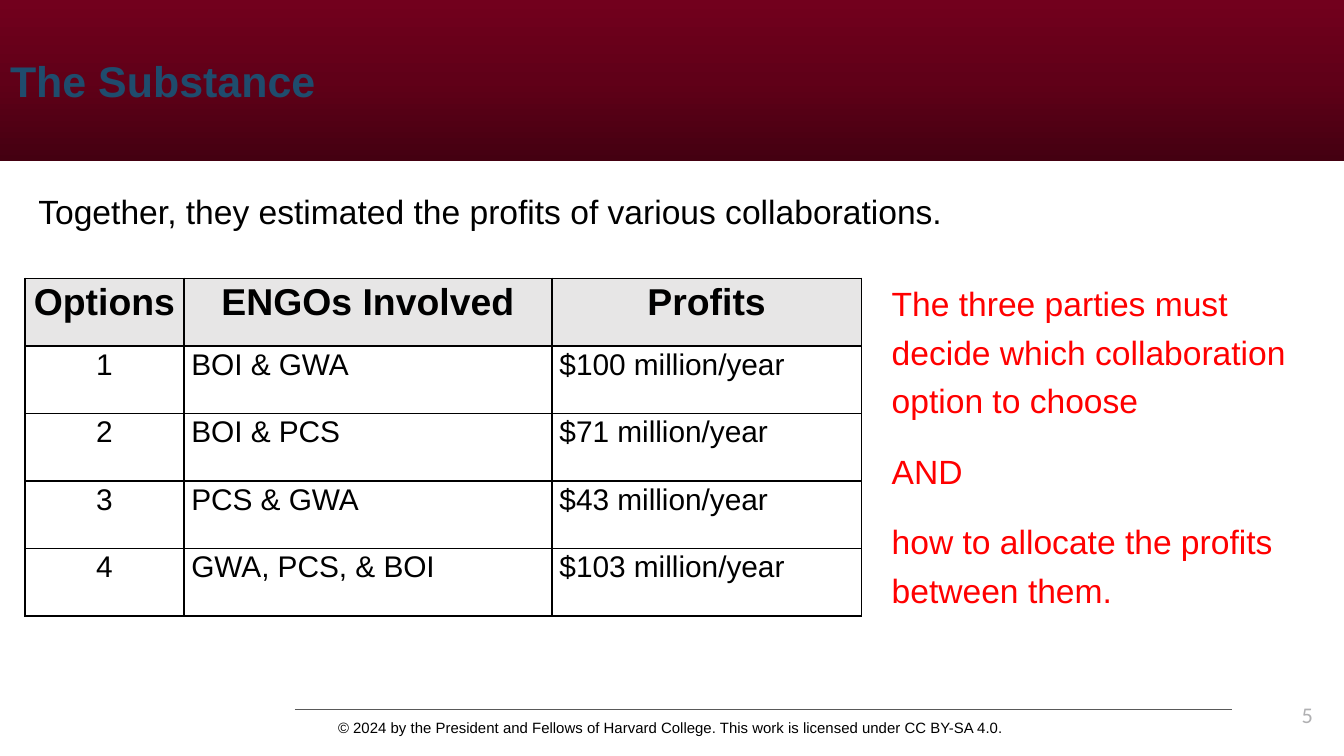
import copy
from dataclasses import dataclass

import pptx
import pptx.dml.color
import pptx.enum.shapes
import pptx.enum.text
import pptx.oxml
import pptx.oxml.ns
import pptx.util

Pt = pptx.util.Pt
RGB = pptx.dml.color.RGBColor.from_string
Align = pptx.enum.text.PP_ALIGN
Anchor = pptx.enum.text.MSO_ANCHOR


@dataclass(frozen=True)
class Theme:
    font: str = "Arial"
    number_font: str = "Calibri"
    black: str = "000000"
    title: str = "1F4C6D"
    accent: str = "FF0000"
    rule: str = "595959"
    number: str = "B0B0B2"
    header_fill: str = "E7E6E6"
    banner: tuple = ((0, "440011"), (0.5, "600018"), (1, "72001D"))
    title_size: float = 23
    header_size: float = 20
    body_size: float = 18
    cell_size: float = 16
    number_size: float = 12
    footer_size: float = 8


theme = Theme()


def style(para, size, color, bold=False, align=Align.LEFT, name=theme.font):
    para.alignment = align
    para.font.name = name
    para.font.size = Pt(size)
    para.font.bold = bold
    para.font.color.rgb = RGB(color)


def add_text(page, frame, insets, lines, size, color, **look):
    """Add a wrapping text box; insets are (horizontal, vertical)."""
    box = page.shapes.add_textbox(*map(Pt, frame))
    text = box.text_frame
    text.word_wrap = True
    text.margin_left = text.margin_right = Pt(insets[0])
    text.margin_top = text.margin_bottom = Pt(insets[1])
    text.text = "\n".join(lines)
    for para in text.paragraphs:
        style(para, size, color, **look)
    return text


deck = pptx.Presentation()
deck.slide_width, deck.slide_height = Pt(720), Pt(405)
page = deck.slides.add_slide(deck.slide_layouts[6])

# Footer
rule = page.shapes.add_connector(
    pptx.enum.shapes.MSO_CONNECTOR.STRAIGHT, Pt(158), Pt(380), Pt(660), Pt(380))
rule.line.color.rgb = RGB(theme.rule)
rule.line.width = Pt(0.75)
rule._element.spPr.append(pptx.oxml.parse_xml(
    f'<a:effectLst {pptx.oxml.ns.nsdecls("a")}/>'))
add_text(page, (174, 381.6, 486, 17), (7.2, 3.6),
         ["© 2024 by the President and Fellows of Harvard College. "
          "This work is licensed under CC BY-SA 4.0."],
         theme.footer_size, theme.black)

# Title banner
banner = page.shapes.add_shape(
    pptx.enum.shapes.MSO_SHAPE.RECTANGLE, 0, 0, deck.slide_width, Pt(86.4))
banner.shadow.inherit = False
banner.line.fill.background()
banner.fill.gradient()
banner.fill.gradient_angle = 90
stop_list = banner._element.spPr.find(".//" + pptx.oxml.ns.qn("a:gsLst"))
stop_list.append(copy.deepcopy(stop_list[-1]))
for stop, (position, color) in zip(banner.fill.gradient_stops, theme.banner):
    stop.position = position
    stop.color.rgb = RGB(color)
text = banner.text_frame
text.margin_left = text.margin_right = Pt(5.4)
text.margin_top = text.margin_bottom = Pt(2.7)
text.vertical_anchor = Anchor.MIDDLE
text.text = "The Substance"
style(text.paragraphs[0], theme.title_size, theme.title, bold=True)

# Slide number and introduction
number = add_text(page, (667.5, 367.5, 43, 31), (7.2, 7.2), ["5"],
                  theme.number_size, theme.number,
                  align=Align.RIGHT, name=theme.number_font)
number.vertical_anchor = Anchor.MIDDLE
add_text(page, (13.5, 98.6, 693, 34), (7.2, 3.6),
         ["Together, they estimated the profits of various collaborations."],
         theme.body_size, theme.black)

# Profit table
rows = [
    ("Options", "ENGOs Involved", "Profits"),
    ("1", "BOI & GWA", "$100 million/year"),
    ("2", "BOI & PCS", "$71 million/year"),
    ("3", "PCS & GWA", "$43 million/year"),
    ("4", "GWA, PCS, & BOI", "$103 million/year"),
]
widths = (85, 197.25, 165.75)
row_height = 36.15
table = page.shapes.add_table(
    len(rows), len(widths), Pt(13.5), Pt(149.2),
    Pt(sum(widths)), Pt(row_height * len(rows))).table
for column, width in zip(table.columns, widths):
    column.width = Pt(width)
for row_index, values in enumerate(rows):
    table.rows[row_index].height = Pt(row_height)
    header = row_index == 0
    for column_index, value in enumerate(values):
        cell = table.cell(row_index, column_index)
        cell.margin_left = cell.margin_right = Pt(4)
        cell.margin_top = cell.margin_bottom = 0
        cell.text = value
        para = cell.text_frame.paragraphs[0]
        centred = header or column_index == 0
        style(para, theme.header_size if header else theme.cell_size, theme.black,
              bold=header, align=Align.CENTER if centred else Align.LEFT)
        para.line_spacing = 1.07
        properties = cell._tc.get_or_add_tcPr()
        for side in ("lnL", "lnR", "lnT", "lnB"):
            properties.append(pptx.oxml.parse_xml(
                f'<a:{side} {pptx.oxml.ns.nsdecls("a")} w="{Pt(1)}"><a:solidFill>'
                f'<a:srgbClr val="{theme.black}"/></a:solidFill></a:{side}>'))
        if header:
            cell.fill.solid()
            cell.fill.fore_color.rgb = RGB(theme.header_fill)
        else:
            cell.fill.background()

# The decision to make
decision = add_text(
    page, (472.3, 144.7, 234.7, 209), (5.4, 2.7),
    ["The three parties must decide which collaboration option to choose",
     "AND",
     "how to allocate the profits between them."],
    theme.body_size, theme.accent)
for index, para in enumerate(decision.paragraphs):
    para.line_spacing = 1.2
    para.space_before = Pt(12 if index else 0)

deck.save("out.pptx")
